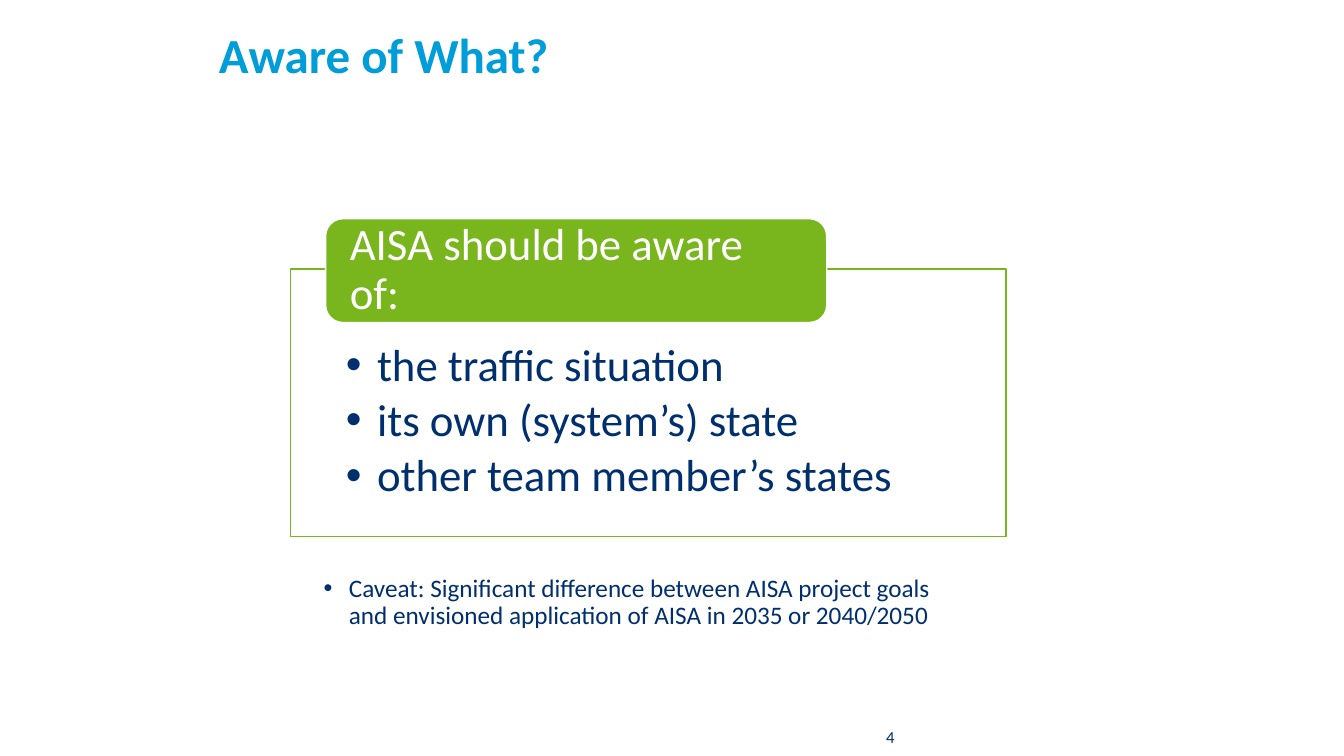
from lxml.etree import SubElement
from pptx import Presentation
from pptx.dml.color import RGBColor
from pptx.enum.shapes import MSO_SHAPE as Preset
from pptx.enum.text import MSO_ANCHOR as Anchor, MSO_AUTO_SIZE as AutoSize, PP_ALIGN as Align
from pptx.oxml.ns import qn
from pptx.util import Inches, Pt

NAVY, BLUE, GREEN, WHITE = "002F6E", "009DD9", "79B51D", "FFFFFF"


def color(value):
    return RGBColor.from_string(value)


class SlideBuilder:
    font_name = "Calibri"

    def __init__(self, page):
        self.page = page

    def place(self, box, left, top, width, height):
        box.left, box.top = Inches(left), Inches(top)
        box.width, box.height = Inches(width), Inches(height)

    def set_text(self, box, lines, size, ink, insets=(0, 0, 0, 0), anchor=Anchor.TOP,
                 indent=0, spacing=0.9, after=0, bold=False):
        frame = box.text_frame
        frame.word_wrap = True
        frame.auto_size = AutoSize.NONE
        frame.vertical_anchor = anchor
        (frame.margin_left, frame.margin_top,
         frame.margin_right, frame.margin_bottom) = map(Inches, insets)
        frame.text = "\n".join(lines)
        for para in frame.paragraphs:
            para.alignment = Align.LEFT
            para.line_spacing = spacing
            para.space_before, para.space_after = Pt(0), Pt(after)
            if indent:
                self.bullet(para, indent)
            font = para.font
            font.name, font.size, font.bold = self.font_name, Pt(size), bold
            font.color.rgb = color(ink)

    def bullet(self, para, indent):
        properties = para._p.get_or_add_pPr()
        properties.set("marL", str(Inches(indent)))
        properties.set("indent", str(-Inches(indent)))
        SubElement(properties, qn("a:buFont"), typeface="Arial")
        SubElement(properties, qn("a:buChar"), char="•")

    def title(self, text, place):
        box = self.page.shapes.title
        self.place(box, *place)
        self.set_text(box, [text], 35, BLUE, bold=True)

    def body(self, lines, place):
        box = self.page.placeholders[1]
        self.place(box, *place)
        self.set_text(box, lines, 18, NAVY, (0.1, 0.05, 0.1, 0.05), indent=0.25)

    def label(self, text, place):
        box = self.page.shapes.add_textbox(*map(Inches, place))
        self.set_text(box, [text], 12, NAVY, anchor=Anchor.MIDDLE, spacing=1, after=6)

    def panel(self, preset, place, fill, outline, opacity=100):
        box = self.page.shapes.add_shape(preset, *map(Inches, place))
        box.shadow.inherit = False
        box.fill.solid()
        box.fill.fore_color.rgb = color(fill)
        box.line.color.rgb = color(outline)
        box.line.width = Pt(1)
        if opacity < 100:
            tint = box._element.spPr.find(qn("a:solidFill"))[0]
            SubElement(tint, qn("a:alpha"), val=str(opacity * 1000))
        return box


def main():
    deck = Presentation()
    deck.slide_width, deck.slide_height = Inches(13.33), Inches(7.5)
    builder = SlideBuilder(deck.slides.add_slide(deck.slide_layouts[1]))

    builder.title("Aware of What?", (2.17, 0.31, 6.93, 1.25))
    builder.body(["Caveat: Significant difference between AISA project goals "
                  "and envisioned application of AISA in 2035 or 2040/2050"],
                 (3.11, 5.66, 6.64, 1.38))
    builder.label("4", (8.79, 7.17, 2.33, 0.28))

    topics = builder.panel(Preset.RECTANGLE, (2.88, 2.67, 7.1, 2.65), WHITE, GREEN, 90)
    builder.set_text(topics, ["the traffic situation", "its own (system’s) state",
                              "other team member’s states"],
                     32, NAVY, (0.55, 0.73, 0.55, 0.25), indent=0.31, after=4.8)

    heading = builder.panel(Preset.ROUNDED_RECTANGLE, (3.23, 2.17, 4.97, 1.03), GREEN, WHITE)
    builder.set_text(heading, ["AISA should be aware of:"], 32, WHITE,
                     (0.19, 0, 0.19, 0), Anchor.MIDDLE)

    deck.save("out.pptx")


if __name__ == "__main__":
    main()
